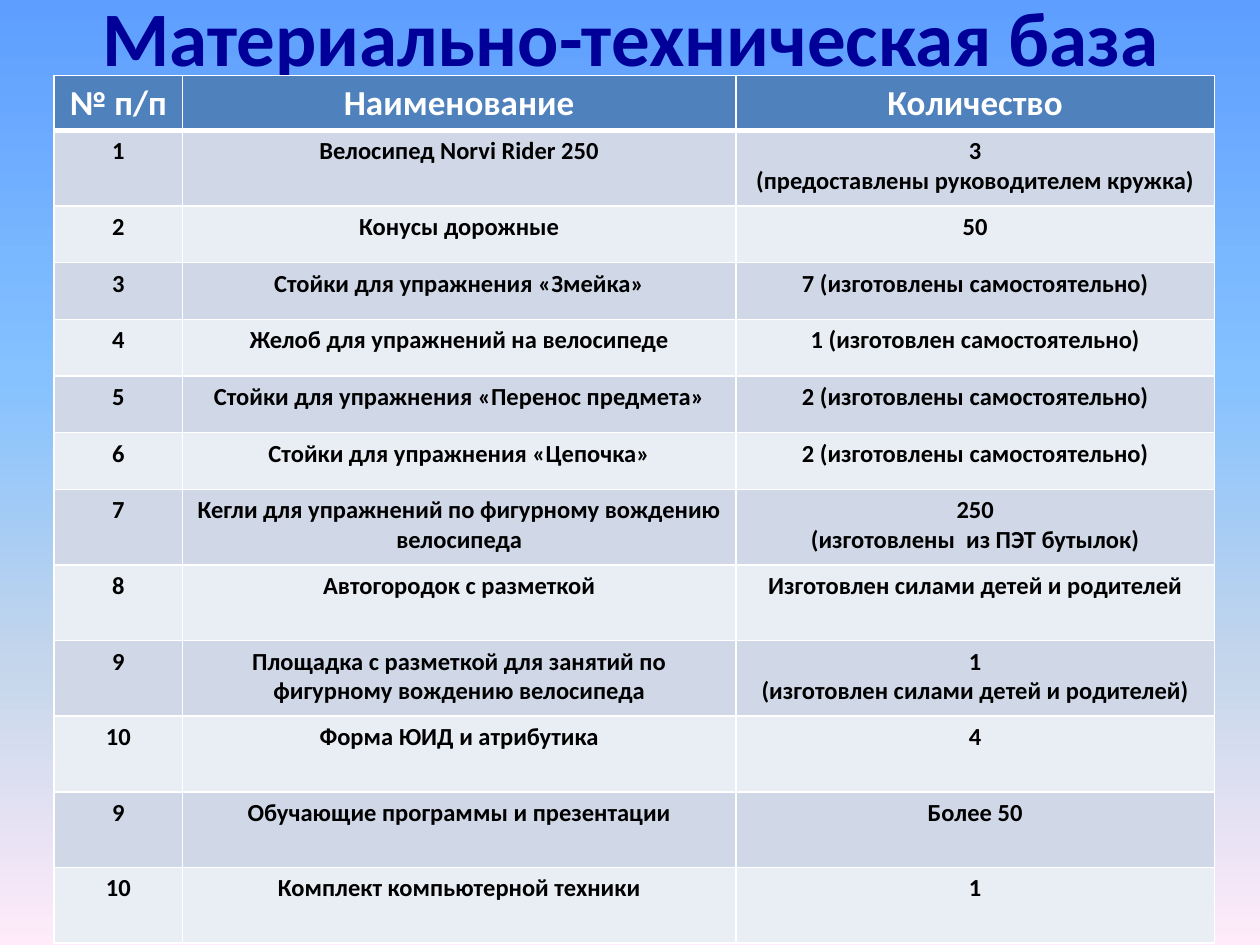
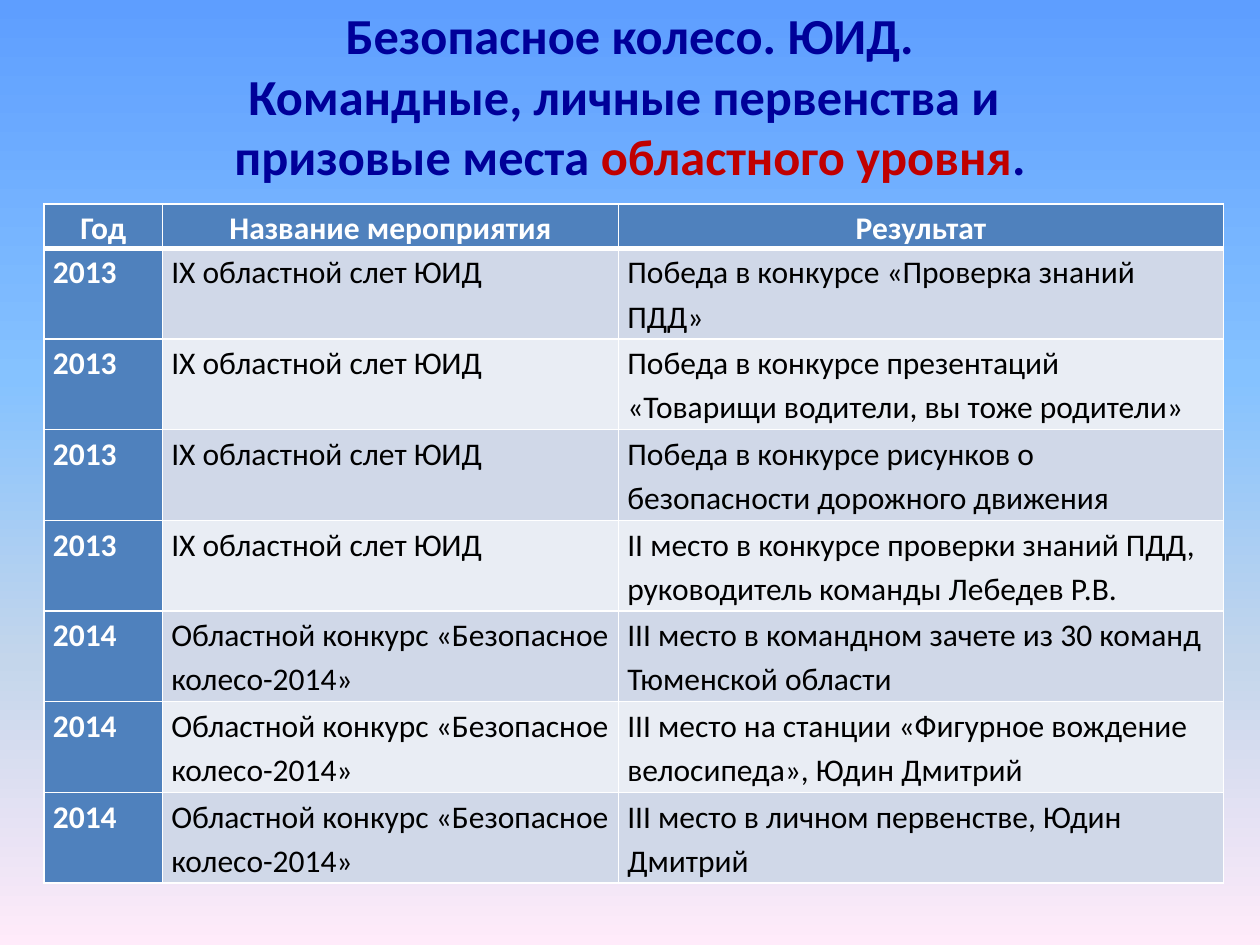
from lxml.etree import SubElement as Sub
from pptx import Presentation
from pptx.dml.color import RGBColor as Rgb
from pptx.enum.text import MSO_ANCHOR as Anchor, PP_ALIGN as Align
from pptx.oxml import parse_xml
from pptx.oxml.ns import nsdecls, qn
from pptx.util import Inches, Pt

COLORS = {
    "title": "000099", "accent": "C00000", "header": "4F81BD",
    "odd": "D0D8E8", "even": "E9EDF4", "white": "FFFFFF", "black": "000000",
}
GRADIENT = [(0, "5E9EFF"), (40, "85C2FF"), (70, "C4D6EB"), (100, "FFEBFA")]
FONT = "Calibri"
SHADOW = (
    f'<a:effectLst {nsdecls("a")}><a:outerShdw blurRad="38100" dist="38100" dir="2700000" algn="tl">'
    '<a:srgbClr val="000000"><a:alpha val="43000"/></a:srgbClr></a:outerShdw></a:effectLst>'
)


def write(para, text, size=14, color="black", bold=True, align=Align.CENTER, spacing=None, shadow=False):
    para.alignment = align
    if spacing:
        para.line_spacing = spacing
    for index, line in enumerate(text.split("\n")):
        if index:
            para.add_line_break()
        span = para.add_run()
        span.text = line
        span.font.size = Pt(size)
        span.font.bold = bold
        span.font.color.rgb = Rgb.from_string(COLORS[color])
        span.font.name = FONT
        if shadow:
            fill = span.font._element.find(qn("a:solidFill"))
            fill.addnext(parse_xml(SHADOW))


def set_borders(cell, top, bottom):
    properties = cell._tc.get_or_add_tcPr()
    for index, (side, width) in enumerate([("L", 1), ("R", 1), ("T", top), ("B", bottom)]):
        properties.insert(index, parse_xml(
            f'<a:ln{side} {nsdecls("a")} w="{Pt(width)}"><a:solidFill>'
            f'<a:srgbClr val="{COLORS["white"]}"/></a:solidFill></a:ln{side}>'
        ))


equipment = [
    ("№ п/п", "Наименование", "Количество"),
    ("1", "Велосипед Norvi Rider 250", "3\n(предоставлены руководителем кружка)"),
    ("2", "Конусы дорожные", "50"),
    ("3", "Стойки для упражнения «Змейка»", "7 (изготовлены самостоятельно)"),
    ("4", "Желоб для упражнений на велосипеде", "1 (изготовлен самостоятельно)"),
    ("5", "Стойки для упражнения «Перенос предмета»", "2 (изготовлены самостоятельно)"),
    ("6", "Стойки для упражнения «Цепочка»", "2 (изготовлены самостоятельно)"),
    ("7", "Кегли для упражнений по фигурному вождению велосипеда", "250\n(изготовлены  из ПЭТ бутылок)"),
    ("8", "Автогородок с разметкой", "Изготовлен силами детей и родителей"),
    ("9", "Площадка с разметкой для занятий по фигурному вождению велосипеда",
     "1\n(изготовлен силами детей и родителей)"),
    ("10", "Форма ЮИД и атрибутика", "4"),
    ("9", "Обучающие программы и презентации", "Более 50"),
    ("10", "Комплект компьютерной техники", "1"),
]

rally = "IX областной слет ЮИД"
contest = "Областной конкурс «Безопасное колесо-2014»"
awards = [
    ("Год", "Название мероприятия", "Результат"),
    ("2013", rally, "Победа в конкурсе «Проверка знаний ПДД»"),
    ("2013", rally, "Победа в конкурсе презентаций «Товарищи водители, вы тоже родители»"),
    ("2013", rally, "Победа в конкурсе рисунков о безопасности дорожного движения"),
    ("2013", rally, "II место в конкурсе проверки знаний ПДД, руководитель команды Лебедев Р.В."),
    ("2014", contest, "III место в командном зачете из 30 команд Тюменской области"),
    ("2014", contest, "III место на станции «Фигурное вождение велосипеда», Юдин Дмитрий"),
    ("2014", contest, "III место в личном первенстве, Юдин Дмитрий"),
]

pages = [
    {
        "title": [("Материально-техническая база", "title")],
        "title_size": 44, "title_box": (0.51, -0.34, 9, 1.25),
        "rows": equipment, "corner": (0.43, 0.6), "widths": [1.02, 4.39, 3.8],
        "heights": [0.41, 0.6] + [0.45] * 5 + [0.6] * 6,
        "header_size": 20, "body_size": 14, "body_bold": True, "body_align": Align.CENTER,
        "spacing": None, "insets": (0.1, 0.05), "year_column": False,
    },
    {
        "title": [
            ("Безопасное колесо. ЮИД.\nКомандные, личные первенства и \nпризовые места ", "title"),
            ("областного уровня", "accent"),
            (".", "title"),
        ],
        "title_size": 28.8, "title_box": (0, 0.13, 10, 1.25),
        "rows": awards, "corner": (0.35, 1.62), "widths": [0.94, 3.62, 4.8],
        "heights": [0.35] + [0.72] * 7,
        "header_size": 18, "body_size": 18, "body_bold": False, "body_align": Align.LEFT,
        "spacing": 1.15, "insets": (0.07, 0), "year_column": True,
    },
]

deck = Presentation()
deck.slide_width = Inches(10)
deck.slide_height = Inches(7.5)

for page in pages:
    slide = deck.slides.add_slide(deck.slide_layouts[6])

    background = slide.background.fill
    background.gradient()
    background.gradient_angle = 270
    stops = slide.element.find(".//" + qn("a:gsLst"))
    for stop in list(stops):
        stops.remove(stop)
    for position, color in GRADIENT:
        stop = Sub(stops, qn("a:gs"), pos=str(position * 1000))
        Sub(stop, qn("a:srgbClr"), val=color)

    box = slide.shapes.add_textbox(*map(Inches, page["title_box"]))
    box.text_frame.word_wrap = True
    box.text_frame.vertical_anchor = Anchor.MIDDLE
    for text, color in page["title"]:
        write(box.text_frame.paragraphs[0], text, size=page["title_size"], color=color, shadow=True)

    rows, widths, heights = page["rows"], page["widths"], page["heights"]
    left, top = page["corner"]
    table = slide.shapes.add_table(
        len(rows), len(widths), Inches(left), Inches(top), Inches(sum(widths)), Inches(sum(heights))
    ).table
    for column, width in zip(table.columns, widths):
        column.width = Inches(width)
    for row, height in zip(table.rows, heights):
        row.height = Inches(height)

    side_inset, edge_inset = map(Inches, page["insets"])
    for row_index, values in enumerate(rows):
        is_header = row_index == 0
        for column_index, value in enumerate(values):
            strong = is_header or (page["year_column"] and column_index == 0)
            cell = table.cell(row_index, column_index)
            cell.margin_left = cell.margin_right = side_inset
            cell.margin_top = cell.margin_bottom = edge_inset
            cell.fill.solid()
            band = "header" if strong else "odd" if row_index % 2 else "even"
            cell.fill.fore_color.rgb = Rgb.from_string(COLORS[band])
            set_borders(cell, top=3 if row_index == 1 else 1, bottom=3 if is_header else 1)
            for line_index, line in enumerate(value.split("\n")):
                frame = cell.text_frame
                para = frame.add_paragraph() if line_index else frame.paragraphs[0]
                write(
                    para, line,
                    size=page["header_size"] if is_header else page["body_size"],
                    color="white" if strong else "black",
                    bold=strong or page["body_bold"],
                    align=Align.CENTER if is_header else page["body_align"],
                    spacing=page["spacing"],
                )

deck.save("out.pptx")
